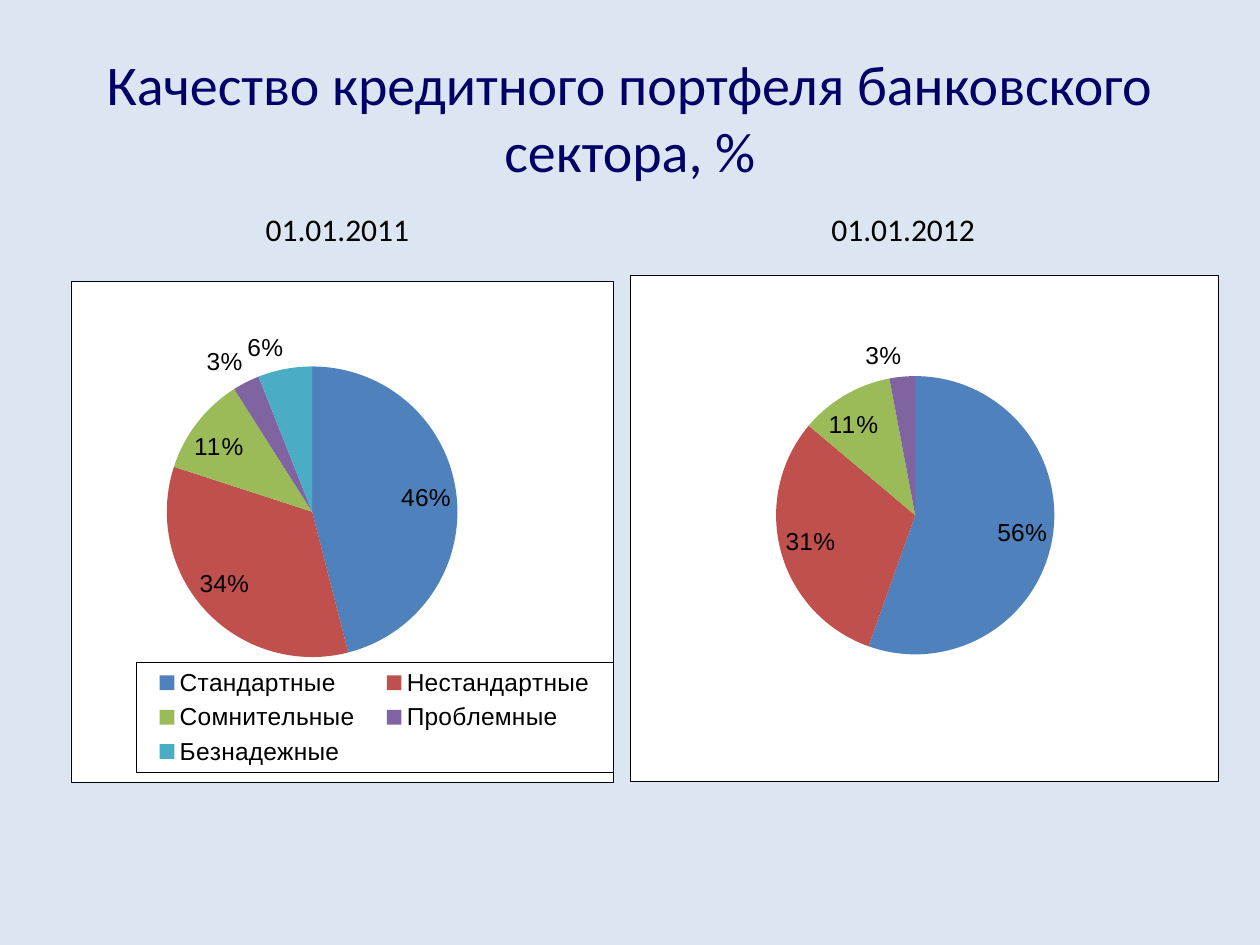
from lxml.etree import fromstring
from pptx import Presentation
from pptx.chart.data import CategoryChartData
from pptx.dml.color import RGBColor
from pptx.enum.chart import XL_CHART_TYPE, XL_LABEL_POSITION, XL_LEGEND_POSITION
from pptx.enum.text import MSO_ANCHOR, MSO_AUTO_SIZE, PP_ALIGN
from pptx.oxml.ns import nsdecls, qn
from pptx.util import Pt

COLORS = {
    "background": "DCE6F2",
    "title": "000066",
    "text": "000000",
    "panel": "FFFFFF",
    "border": "000000",
}
SLICE_COLORS = ["4F81BD", "C0504D", "9BBB59", "8064A2", "4BACC6"]
QUALITY_GROUPS = ["Стандартные", "Нестандартные", "Сомнительные", "Проблемные", "Безнадежные"]
CHART_FONT = {"name": "Arial", "size": Pt(14)}
PANELS = [
    {
        "date": "01.01.2011",
        "caption_box": (144.7, 116.6, 97.2, 28.8),
        "chart_box": (40.3, 160.6, 310.3, 286.6),
        "categories": QUALITY_GROUPS,
        "values": [46, 34, 11, 3, 6],
        "plot_layout": (0.01, 0.17, 0.87, 0.58),
        "legend_layout": (0.12, 0.76, 0.9, 0.22),
    },
    {
        "date": "01.01.2012",
        "caption_box": (468, 116.6, 97.2, 28.8),
        "chart_box": (360, 157, 336.2, 289.4),
        "categories": ["1", "2", "3", "4"],
        "values": [56, 31, 11, 3],
        "plot_layout": (0.07, 0.2, 0.83, 0.55),
        "legend_layout": None,
    },
]


def format_font(font, color, values):
    for name, value in values.items():
        setattr(font, name, value)
    font.color.rgb = RGBColor.from_string(color)


def add_text(slide, box, text, color, font_values, frame_values, alignment):
    shape = slide.shapes.add_textbox(*map(Pt, box))
    frame = shape.text_frame
    for name, value in frame_values.items():
        setattr(frame, name, value)
    paragraph = frame.paragraphs[0]
    paragraph.alignment = alignment
    run = paragraph.add_run()
    run.text = text
    format_font(run.font, color, font_values)


def make_layout(box, target=""):
    edges = "".join(f'<c:{edge}Mode val="edge"/>' for edge in "xy")
    sizes = "".join(f'<c:{name} val="{value}"/>' for name, value in zip("xywh", box))
    return fromstring(
        f'<c:layout {nsdecls("c")}><c:manualLayout>{target}{edges}{sizes}'
        "</c:manualLayout></c:layout>"
    )


def make_frame_format():
    return fromstring(
        f'<c:spPr {nsdecls("c", "a")}>'
        f'<a:solidFill><a:srgbClr val="{COLORS["panel"]}"/></a:solidFill>'
        f'<a:ln w="3175"><a:solidFill><a:srgbClr val="{COLORS["border"]}"/>'
        "</a:solidFill></a:ln></c:spPr>"
    )


def remove_layout(element):
    for layout in element.findall(qn("c:layout")):
        element.remove(layout)


def add_legend(chart, box):
    chart.has_legend = True
    legend = chart.legend
    legend.position = XL_LEGEND_POSITION.BOTTOM
    legend.include_in_layout = True
    format_font(legend.font, COLORS["text"], CHART_FONT)
    element = chart.element.find(".//" + qn("c:legend"))
    remove_layout(element)
    element.find(qn("c:legendPos")).addnext(make_layout(box))
    element.find(qn("c:overlay")).addnext(make_frame_format())


def add_pie(slide, panel):
    data = CategoryChartData()
    data.categories = panel["categories"]
    data.add_series("Series 1", panel["values"])
    box = map(Pt, panel["chart_box"])
    chart = slide.shapes.add_chart(XL_CHART_TYPE.PIE, *box, data).chart
    chart.has_title = False
    chart.has_legend = False
    format_font(chart.font, COLORS["text"], CHART_FONT)
    chart.element.find(qn("c:chart")).addnext(make_frame_format())
    plot_area = chart.element.find(".//" + qn("c:plotArea"))
    remove_layout(plot_area)
    plot_area.insert(0, make_layout(panel["plot_layout"], '<c:layoutTarget val="inner"/>'))

    plot = chart.plots[0]
    plot.vary_by_categories = True
    series = plot.series[0]
    for index, color in enumerate(SLICE_COLORS[: len(panel["values"])]):
        point_format = series.points[index].format
        point_format.fill.solid()
        point_format.fill.fore_color.rgb = RGBColor.from_string(color)
        point_format.line.fill.background()
    labels = series.data_labels
    label_values = {
        "show_value": True,
        "number_format": '0"%"',
        "number_format_is_linked": False,
        "position": XL_LABEL_POSITION.BEST_FIT,
    }
    for name, value in label_values.items():
        setattr(labels, name, value)
    format_font(labels.font, COLORS["text"], CHART_FONT)
    if panel["legend_layout"]:
        add_legend(chart, panel["legend_layout"])


def add_title(slide, box):
    add_text(
        slide, box, "Качество кредитного портфеля банковского сектора, %", COLORS["title"],
        {"name": "Calibri", "size": Pt(32)},
        {"word_wrap": True, "vertical_anchor": MSO_ANCHOR.MIDDLE}, PP_ALIGN.CENTER,
    )


def add_panel(slide, panel):
    add_pie(slide, panel)
    add_text(
        slide, panel["caption_box"], panel["date"], COLORS["text"],
        {"name": "Calibri", "size": Pt(18)},
        {"word_wrap": False, "auto_size": MSO_AUTO_SIZE.SHAPE_TO_FIT_TEXT}, PP_ALIGN.LEFT,
    )


def main():
    presentation = Presentation()
    presentation.slide_width, presentation.slide_height = Pt(720), Pt(540)
    slide = presentation.slides.add_slide(presentation.slide_layouts[6])
    slide.background.fill.solid()
    slide.background.fill.fore_color.rgb = RGBColor.from_string(COLORS["background"])
    add_title(slide, (36, 21.6, 648, 90))
    for panel in PANELS:
        add_panel(slide, panel)
    presentation.save("out.pptx")


if __name__ == "__main__":
    main()
